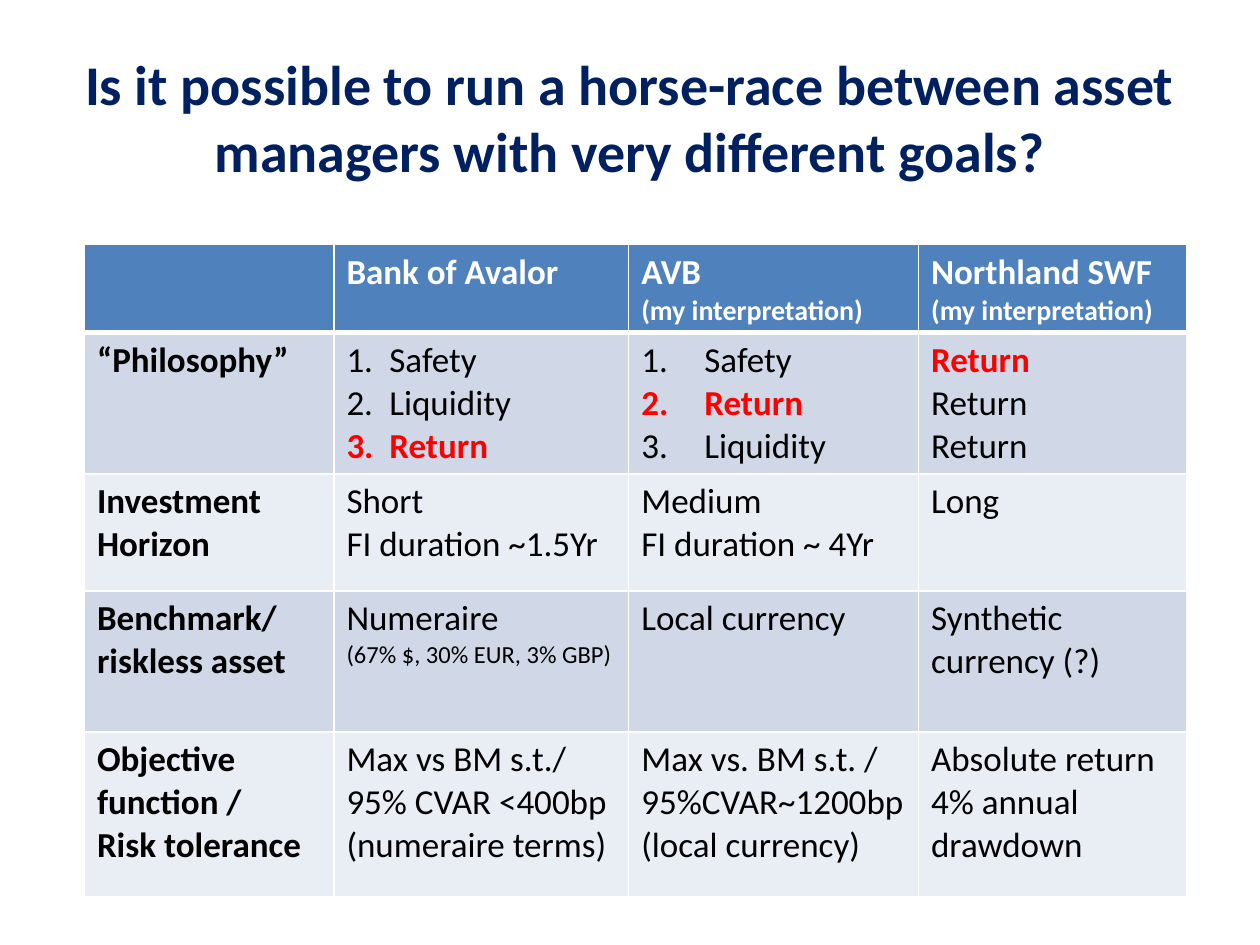
"""Build a slide with a table comparing the goals of three asset managers."""
from dataclasses import dataclass

from lxml import etree
from pptx import Presentation
from pptx.dml.color import RGBColor
from pptx.enum.text import MSO_ANCHOR, PP_ALIGN
from pptx.oxml.ns import qn
from pptx.util import Inches, Pt

MIDDLE = MSO_ANCHOR.MIDDLE
CENTER = PP_ALIGN.CENTER


@dataclass(frozen=True)
class Theme:
    """Colours, type sizes and line widths."""
    font: str = "Calibri"
    navy: str = "002060"
    header: str = "4F81BD"
    bands: tuple[str, str] = ("D0D8E8", "E9EDF4")
    white: str = "FFFFFF"
    black: str = "000000"
    red: str = "FF0000"
    title: int = 32
    body: int = 20
    note: int = 16
    small: int = 14
    thin: int = 1
    thick: int = 3


THEME = Theme()


@dataclass(frozen=True)
class Line:
    """One paragraph of a table cell."""
    text: str
    size: int = THEME.body
    key: bool = False
    indent: float = 0


def numbered(*words: str, indent: float) -> list[Line]:
    """Return a ranked list in which Return is the key item."""
    return [Line(word, key=word == "Return", indent=indent) for word in words]


def plain(*texts: str) -> list[Line]:
    """Return ordinary lines."""
    return [Line(text) for text in texts]


INTERPRETATION = Line("(my interpretation)", THEME.note)
COLUMN_WIDTHS = (1.98, 2.34, 2.3, 2.13)
ROW_HEIGHTS = (0.7, 1.12, 0.93, 1.12, 1.31)
ROWS = [
    [[], plain("Bank of Avalor"), [Line("AVB"), INTERPRETATION],
     [Line("Northland SWF"), INTERPRETATION]],
    [plain("“Philosophy”"),
     numbered("Safety", "Liquidity", "Return", indent=0.34),
     numbered("Safety", "Return", "Liquidity", indent=0.5),
     [Line("Return", key=True), *plain("Return", "Return")]],
    [plain("Investment Horizon"), plain("Short", "FI duration ~1.5Yr"),
     plain("Medium", "FI duration ~ 4Yr"), plain("Long")],
    [plain("Benchmark/ riskless asset"),
     [Line("Numeraire"), Line("(67% $, 30% EUR, 3% GBP)", THEME.small)],
     plain("Local currency"), plain("Synthetic currency (?)")],
    [plain("Objective function /", "Risk tolerance"),
     plain("Max vs BM s.t./", "95% CVAR <400bp", "(numeraire terms)"),
     plain("Max vs. BM s.t. /", "95%CVAR~1200bp", "(local currency)"),
     plain("Absolute return 4% annual drawdown")],
]


def write(para, text: str, *, size: int, color: str, bold: bool = False) -> None:
    """Add formatted text to a paragraph."""
    span = para.add_run()
    span.text = text
    span.font.name = THEME.font
    span.font.size = Pt(size)
    span.font.bold = bold
    span.font.color.rgb = RGBColor.from_string(color)


def number(para, indent: float) -> None:
    """Give a paragraph automatic numbering with a hanging indent."""
    properties = para._p.get_or_add_pPr()
    properties.set("marL", str(Inches(indent)))
    properties.set("indent", str(-Inches(indent)))
    etree.SubElement(properties, qn("a:buFont"), typeface="+mj-lt")
    etree.SubElement(properties, qn("a:buAutoNum"), type="arabicPeriod")


def add_borders(cell, *, top: int, bottom: int) -> None:
    """Draw white lines round a cell."""
    properties = cell._tc.get_or_add_tcPr()
    widths = {"L": THEME.thin, "R": THEME.thin, "T": top, "B": bottom}
    for side, width in widths.items():
        line = etree.SubElement(properties, qn(f"a:ln{side}"), w=str(Pt(width)))
        fill = etree.SubElement(line, qn("a:solidFill"))
        etree.SubElement(fill, qn("a:srgbClr"), val=THEME.white)


def fill_cell(cell, lines: list[Line], row: int, column: int) -> None:
    """Style one cell and write its lines."""
    header = row == 0
    add_borders(cell, top=THEME.thick if row == 1 else THEME.thin,
                bottom=THEME.thick if header else THEME.thin)
    cell.fill.solid()
    cell.fill.fore_color.rgb = RGBColor.from_string(
        THEME.header if header else THEME.bands[(row - 1) % 2])
    for index, line in enumerate(lines):
        frame = cell.text_frame
        para = frame.add_paragraph() if index else frame.paragraphs[0]
        if line.indent:
            number(para, line.indent)
        color = THEME.white if header else THEME.red if line.key else THEME.black
        write(para, line.text, size=line.size, color=color,
              bold=header or column == 0 or line.key)


def add_title(page, text: str) -> None:
    """Add the centred slide title."""
    box = page.shapes.add_textbox(Inches(0.5), Inches(0.3), Inches(9), Inches(1.25))
    frame = box.text_frame
    frame.word_wrap = True
    frame.vertical_anchor = MIDDLE
    para = frame.paragraphs[0]
    para.alignment = CENTER
    write(para, text, size=THEME.title, color=THEME.navy, bold=True)


def add_comparison(page) -> None:
    """Add the table of managers and goals."""
    table = page.shapes.add_table(
        len(ROWS), len(COLUMN_WIDTHS), Inches(0.67), Inches(1.94),
        Inches(sum(COLUMN_WIDTHS)), Inches(sum(ROW_HEIGHTS))).table
    for column, width in zip(table.columns, COLUMN_WIDTHS):
        column.width = Inches(width)
    for row, height in zip(table.rows, ROW_HEIGHTS):
        row.height = Inches(height)
    for row, cells in enumerate(ROWS):
        for column, lines in enumerate(cells):
            fill_cell(table.cell(row, column), lines, row, column)


def main() -> None:
    """Build and save the deck."""
    deck = Presentation()
    deck.slide_width, deck.slide_height = Inches(10), Inches(7.5)
    page = deck.slides.add_slide(deck.slide_layouts[6])
    add_title(page, "Is it possible to run a horse-race between asset "
                    "managers with very different goals?")
    add_comparison(page)
    deck.save("out.pptx")


if __name__ == "__main__":
    main()
